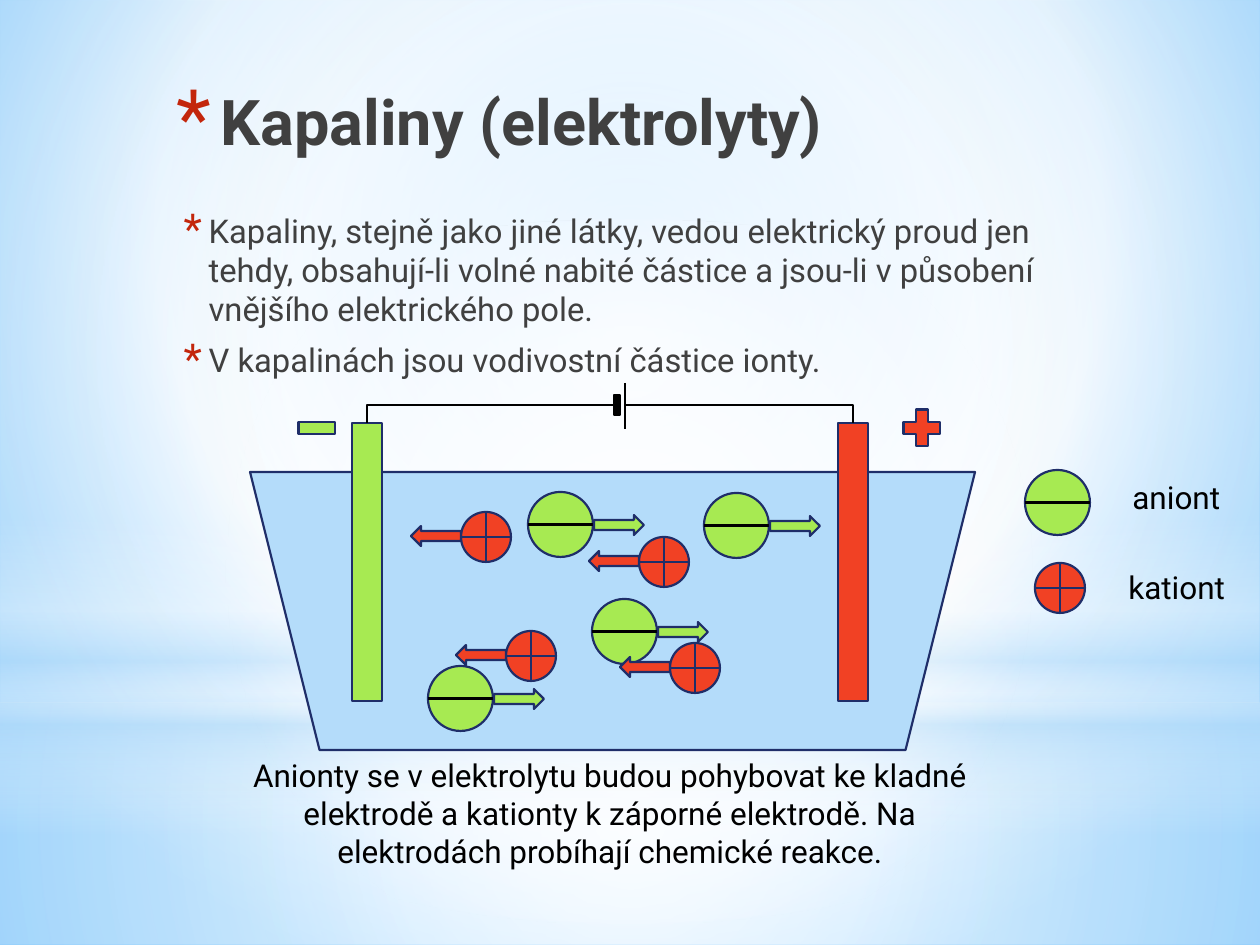
from typing import NamedTuple

from lxml.etree import SubElement
from pptx import Presentation
from pptx.dml.color import RGBColor
from pptx.enum.shapes import MSO_CONNECTOR as Cx, MSO_SHAPE as Sh
from pptx.enum.text import MSO_ANCHOR as Anchor, MSO_AUTO_SIZE as Auto, PP_ALIGN as Align
from pptx.oxml.ns import qn
from pptx.util import Emu, Pt

PX = 914400 / 126
FONT = "Roboto"
BLACK, GRAY, NAVY = "000000", "404040", "1F2E69"
GREEN, RED, WATER, BULLET = "A7EA52", "F14124", "B4DCFA", "C3260C"
ANION_D, CATION_D, ARROW_W, ARROW_H = 65, 50, 50, 20


class Ion(NamedTuple):
    x: int
    y: int


class Backdrop(NamedTuple):
    kind: Sh
    box: tuple[int, int, int, int]
    stops: list[tuple[int, str, int]]  # position, colour, opacity
    angle: int | None = None


BACKDROPS = [
    Backdrop(Sh.RECTANGLE, (0, 703, 1260, 242),
             [(0, "FFFFFF", 91), (37, "FFFFFF", 76), (100, WATER, 79)]),
    Backdrop(Sh.RECTANGLE, (0, 0, 1260, 703),
             [(0, "FFFFFF", 89), (48, "FFFFFF", 62), (100, WATER, 79)]),
    Backdrop(Sh.RECTANGLE, (0, 519, 1260, 315),
             [(0, "FFFFFF", 0), (29, "FFFFFF", 30), (45, WATER, 40),
              (55, "FFFFFF", 26), (65, WATER, 60), (100, "FFFFFF", 0)], 90),
    Backdrop(Sh.OVAL, (0, 220, 1260, 703), [(0, "FFFFFF", 100), (56, "FFFFFF", 0)]),
]
CATIONS = [Ion(461, 512), Ion(506, 631), Ion(639, 537), Ion(670, 643)]
ANIONS = [Ion(428, 666), Ion(528, 492), Ion(592, 599), Ion(704, 493)]


def px(n: float) -> Emu:
    return Emu(round(n * PX))


def rgb(color: str) -> RGBColor:
    return RGBColor.from_string(color)


def set_gradient(fill, root, stops, angle=None, center=(50, 50, 50, 50)) -> None:
    """Give a fill a linear gradient, or a circular one when no angle is set."""
    fill.gradient()
    grad = root.xpath(".//a:gradFill")[0]
    for child in list(grad):
        grad.remove(child)
    gs_list = SubElement(grad, qn("a:gsLst"))
    for pos, color, opacity in stops:
        gs = SubElement(gs_list, qn("a:gs"), pos=str(pos * 1000))
        clr = SubElement(gs, qn("a:srgbClr"), val=color)
        if opacity < 100:
            SubElement(clr, qn("a:alpha"), val=str(opacity * 1000))
    if angle is not None:
        SubElement(grad, qn("a:lin"), ang=str(angle * 60000), scaled="0")
    else:
        circle = SubElement(grad, qn("a:path"), path="circle")
        SubElement(circle, qn("a:fillToRect"),
                   {side: str(v * 1000) for side, v in zip("ltrb", center)})


def add_shape(s, kind: Sh, x, y, w, h, fill: str, line: str = NAVY, rotation: int = 0):
    sp = s.shapes.add_shape(kind, px(x), px(y), px(w), px(h))
    sp.shadow.inherit = False
    sp.fill.solid()
    sp.fill.fore_color.rgb = rgb(fill)
    sp.line.color.rgb = rgb(line)
    sp.line.width = Pt(1.25)
    sp.rotation = rotation
    return sp


def add_line(s, x1, y1, x2, y2, width: float = 1.25, kind: Cx = Cx.STRAIGHT):
    cx = s.shapes.add_connector(kind, px(x1), px(y1), px(x2), px(y2))
    cx.line.color.rgb = rgb(BLACK)
    cx.line.width = Pt(width)
    SubElement(cx._element.spPr, qn("a:effectLst"))
    return cx


def add_wire(s, x, y, electrode):
    """Run level from the battery, then down to the top of an electrode."""
    top = electrode.left + electrode.width // 2
    wire = add_line(s, x, y, top / PX, electrode.top / PX, kind=Cx.ELBOW)
    wire._element.spPr.find(qn("a:prstGeom")).set("prst", "bentConnector2")
    wire.end_connect(electrode, 0)
    return wire


def add_backdrop(s, order: int, b: Backdrop) -> None:
    sp = add_shape(s, b.kind, *b.box, fill="FFFFFF")
    sp.line.fill.background()
    set_gradient(sp.fill, sp._element.spPr, b.stops, b.angle)
    s.shapes._spTree.insert(2 + order, sp._element)


def add_cation(s, ion: Ion) -> None:
    add_shape(s, Sh.FLOWCHART_OR, ion.x, ion.y, CATION_D, CATION_D, RED)


def add_anion(s, ion: Ion) -> None:
    add_shape(s, Sh.OVAL, ion.x, ion.y, ANION_D, ANION_D, GREEN)
    middle = ion.y + ANION_D / 2
    add_line(s, ion.x, middle, ion.x + ANION_D, middle, 1.5)


def write(p, text: str, *, size: float = 18, color: str = BLACK, bold: bool = False,
          align: Align = Align.LEFT) -> None:
    p.alignment = align
    r = p.add_run()
    r.text = text
    r.font.name, r.font.size, r.font.bold = FONT, Pt(size), bold
    r.font.color.rgb = rgb(color)


def add_bullet(p, margin: int, hang: int, percent: int) -> None:
    pPr = p._p.get_or_add_pPr()
    pPr.set("marL", str(px(margin)))
    pPr.set("indent", str(-px(hang)))
    SubElement(SubElement(pPr, qn("a:buClr")), qn("a:srgbClr"), val=BULLET)
    SubElement(pPr, qn("a:buSzPct"), val=str(percent * 1000))
    SubElement(pPr, qn("a:buFont"), typeface=FONT)
    SubElement(pPr, qn("a:buChar"), char="*")


def place(sp, x, y, w, h):
    """Move a placeholder and return its text frame, set to the top."""
    sp.left, sp.top, sp.width, sp.height = px(x), px(y), px(w), px(h)
    tf = sp.text_frame
    tf.auto_size, tf.vertical_anchor = Auto.NONE, Anchor.TOP
    return tf


def add_text(s, x, y, w, h, text: str, wrap: bool = False, **fmt) -> None:
    tf = s.shapes.add_textbox(px(x), px(y), px(w), px(h)).text_frame
    tf.word_wrap = wrap
    write(tf.paragraphs[0], text, **fmt)


def main() -> None:
    prs = Presentation()
    prs.slide_width, prs.slide_height = px(1260), px(945)
    s = prs.slides.add_slide(prs.slide_layouts[1])

    # Background
    bg_fill = s.background.fill
    set_gradient(bg_fill, s._element,
                 [(0, "9ED5FF", 100), (60, "FFFFFF", 100), (100, "5BB9FF", 100)],
                 center=(20, 10, 20, 60))
    for order, backdrop in enumerate(BACKDROPS):
        add_backdrop(s, order, backdrop)

    # Title and list
    p = place(s.shapes.title, 164, 76, 897, 157).paragraphs[0]
    write(p, "Kapaliny (elektrolyty)", size=36, color=GRAY, bold=True)
    add_bullet(p, 44, 44, 128)
    tf = place(s.placeholders[1], 164, 204, 922, 169)
    points = [
        "Kapaliny, stejně jako jiné látky, vedou elektrický proud jen tehdy, "
        "obsahují-li volné nabité částice a jsou-li v působení vnějšího elektrického pole.",
        "V kapalinách jsou vodivostní částice ionty.",
    ]
    for i, point in enumerate(points):
        p = tf.add_paragraph() if i else tf.paragraphs[0]
        write(p, point, size=18.7, color=GRAY)
        p.space_before, p.space_after = Pt(3.7), Pt(3)
        add_bullet(p, 32, 25, 130)

    # Vessel and ions
    add_shape(s, Sh.TRAPEZOID, 250, 472, 725, 278, WATER, rotation=180)
    for ion in CATIONS:
        add_cation(s, ion)
    for ion in ANIONS:
        add_anion(s, ion)

    # Legend
    add_anion(s, Ion(1025, 470))
    add_text(s, 1120, 472, 116, 50, "aniont")
    add_cation(s, Ion(1035, 563))
    add_text(s, 1116, 562, 127, 50, "kationt")

    # Electrodes and their signs
    cathode = add_shape(s, Sh.RECTANGLE, 352, 423, 30, 278, GREEN)
    anode = add_shape(s, Sh.RECTANGLE, 838, 423, 30, 278, RED)
    add_shape(s, Sh.MATH_MINUS, 292, 403, 50, 50, GREEN)
    add_shape(s, Sh.MATH_PLUS, 897, 403, 50, 50, RED)

    # Directions of motion
    for ion in ANIONS:
        add_shape(s, Sh.RIGHT_ARROW, ion.x + 66, ion.y + 23, ARROW_W, ARROW_H, GREEN)
    for ion in CATIONS:
        add_shape(s, Sh.RIGHT_ARROW, ion.x - 50, ion.y + 14, ARROW_W, ARROW_H, RED,
                  rotation=180)

    # Circuit with battery
    add_wire(s, 614, 405, cathode)
    add_wire(s, 625, 405, anode)
    add_line(s, 625, 383, 625, 429)
    add_shape(s, Sh.RECTANGLE, 614, 395, 6, 20, BLACK, BLACK)

    add_text(s, 213, 750, 794, 127,
             "Anionty se v elektrolytu budou pohybovat ke kladné elektrodě a kationty "
             "k záporné elektrodě. Na elektrodách probíhají chemické reakce.",
             wrap=True, align=Align.CENTER)

    prs.save("out.pptx")


if __name__ == "__main__":
    main()
